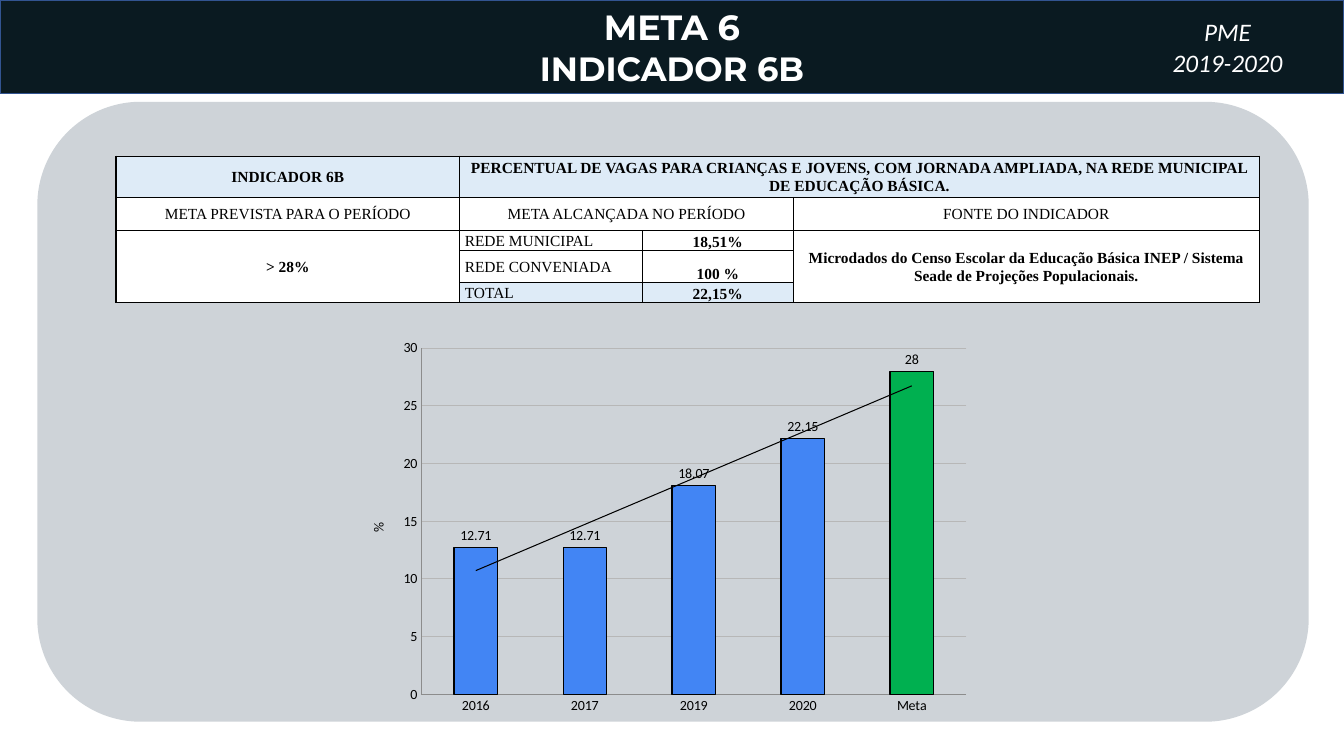
from dataclasses import dataclass

from lxml import etree
from pptx import Presentation
from pptx.chart.data import CategoryChartData
from pptx.dml.color import RGBColor
from pptx.enum.chart import XL_CHART_TYPE, XL_LABEL_POSITION, XL_TICK_MARK
from pptx.enum.shapes import MSO_SHAPE
from pptx.enum.text import MSO_ANCHOR, MSO_AUTO_SIZE, PP_ALIGN
from pptx.oxml import parse_xml
from pptx.oxml.ns import nsdecls, qn
from pptx.util import Inches, Pt

LEFT, CENTER = PP_ALIGN.LEFT, PP_ALIGN.CENTER
MIDDLE, BOTTOM = MSO_ANCHOR.MIDDLE, MSO_ANCHOR.BOTTOM
NO_TICK = MSO_TICK = XL_TICK_MARK.NONE
TITLE_ONLY = 5


@dataclass(frozen=True)
class Theme:
    white: str = "FFFFFF"
    black: str = "000000"
    header: str = "0A1A21"
    header_line: str = "325491"
    panel: str = "CED3D8"
    tint: str = "DEEBF7"
    bar: str = "4285F4"
    goal: str = "00B050"
    grid: str = "B7B7B7"
    axis: str = "8C8C8C"
    heading: str = "Montserrat"
    body: str = "Calibri"
    serif: str = "Times New Roman"
    title_size: float = 25
    subtitle_size: float = 24
    period_size: float = 18
    table_size: float = 11
    chart_size: float = 10


THEME = Theme()


def rgb(code):
    return RGBColor.from_string(code)


def set_font(font, name, size, color, **styles):
    formats = {"name": name, "size": Pt(size), "bold": False, **styles}
    for attribute, value in formats.items():
        setattr(font, attribute, value)
    font.color.rgb = rgb(color)


def paint(item, fill, line, width=1):
    item.fill.solid()
    item.fill.fore_color.rgb = rgb(fill)
    item.line.color.rgb = rgb(line)
    item.line.width = Pt(width)


def place(shape, box):
    for side, length in zip(("left", "top", "width", "height"), box):
        setattr(shape, side, Inches(length))


def write_lines(frame, lines, name, sizes, **styles):
    frame.word_wrap = True
    frame.vertical_anchor = MIDDLE
    for index, (text, size) in enumerate(zip(lines, sizes)):
        line = frame.paragraphs[0] if index == 0 else frame.add_paragraph()
        line.alignment = CENTER
        line.line_spacing = 1.0
        line.space_before = Pt(0)
        run = line.add_run()
        run.text = text
        set_font(run.font, name, size, THEME.white, **styles)


def add_header(slide, box):
    # Title band
    heading = slide.shapes.title
    place(heading, box)
    paint(heading, THEME.header, THEME.header_line)
    heading.text_frame.auto_size = MSO_AUTO_SIZE.NONE
    write_lines(heading.text_frame, ("META 6", "INDICADOR 6B"), THEME.heading,
                (THEME.title_size, THEME.subtitle_size), bold=True)

    # Plan and period at the right of the band
    left, top, width, _ = box
    period_box = (left + width - 2.46, top + 0.11, 2.61, 0.71)
    period = slide.shapes.add_textbox(*map(Inches, period_box))
    write_lines(period.text_frame, ("PME", "2019-2020"), THEME.body,
                (THEME.period_size,) * 2, italic=True)


def add_panel(slide, box):
    panel = slide.shapes.add_shape(MSO_SHAPE.ROUNDED_RECTANGLE, *map(Inches, box))
    panel.shadow.inherit = False
    panel.fill.solid()
    panel.fill.fore_color.rgb = rgb(THEME.panel)
    panel.line.fill.background()


def style_cell(cell, fill):
    margins = {"margin_left": 0.05, "margin_right": 0.05, "margin_top": 0, "margin_bottom": 0}
    for side, length in margins.items():
        setattr(cell, side, Inches(length))
    cell.fill.solid()
    cell.fill.fore_color.rgb = rgb(fill)
    properties = cell._tc.get_or_add_tcPr()
    for index, edge in enumerate(("lnL", "lnR", "lnT", "lnB")):
        properties.insert(index, parse_xml(
            f'<a:{edge} {nsdecls("a")} w="12700"><a:solidFill>'
            f'<a:srgbClr val="{THEME.black}"/></a:solidFill></a:{edge}>'))


def add_indicator_table(slide, box):
    widths = (3.41, 1.81, 1.5, 4.62)
    heights = (0.41, 0.33, 0.16, 0.32, 0.16)
    table = slide.shapes.add_table(len(heights), len(widths), *map(Inches, box)).table
    table.first_row = table.horz_banding = False
    for column, width in zip(table.columns, widths):
        column.width = Inches(width)
    for row, height in zip(table.rows, heights):
        row.height = Inches(height)

    # Fills and borders
    tinted = {(0, 0), (0, 1), (0, 2), (0, 3), (4, 1), (4, 2)}
    for row in range(len(heights)):
        for column in range(len(widths)):
            fill = THEME.tint if (row, column) in tinted else THEME.white
            style_cell(table.cell(row, column), fill)

    # Merged cells, first to last
    for first, last in (((0, 1), (0, 3)), ((1, 1), (1, 2)),
                        ((2, 0), (4, 0)), ((2, 3), (4, 3))):
        table.cell(*first).merge(table.cell(*last))

    # Entries: row, column, text, bold, alignment, anchor
    entries = [
        (0, 0, "INDICADOR 6B", True, CENTER, MIDDLE),
        (0, 1, "PERCENTUAL DE VAGAS PARA CRIANÇAS E JOVENS, COM JORNADA AMPLIADA, "
               "NA REDE MUNICIPAL DE EDUCAÇÃO BÁSICA.", True, CENTER, MIDDLE),
        (1, 0, "META PREVISTA PARA O PERÍODO", False, CENTER, MIDDLE),
        (1, 1, "META ALCANÇADA NO PERÍODO", False, CENTER, MIDDLE),
        (1, 3, "FONTE DO INDICADOR", False, CENTER, MIDDLE),
        (2, 0, "> 28%", True, CENTER, MIDDLE),
        (2, 3, "Microdados do Censo Escolar da Educação Básica INEP / Sistema "
               "Seade de Projeções Populacionais.", True, CENTER, MIDDLE),
    ]
    results = (("REDE MUNICIPAL", "18,51%"), ("REDE CONVENIADA", "100 %"), ("TOTAL", "22,15%"))
    for row, (network, share) in enumerate(results, start=2):
        entries += [(row, 1, network, False, LEFT, MIDDLE),
                    (row, 2, share, True, CENTER, BOTTOM)]
    for row, column, text, bold, alignment, anchor in entries:
        cell = table.cell(row, column)
        cell.vertical_anchor = anchor
        line = cell.text_frame.paragraphs[0]
        line.alignment = alignment
        line.line_spacing = 1.07
        run = line.add_run()
        run.text = text
        set_font(run.font, THEME.serif, THEME.table_size, THEME.black, bold=bold)


def add_progress_chart(slide, box):
    data = CategoryChartData()
    data.categories = ("2016", "2017", "2019", "2020", "Meta")
    data.add_series("Series 1", (12.71, 12.71, 18.07, 22.15, 28))
    chart = slide.shapes.add_chart(
        XL_CHART_TYPE.COLUMN_CLUSTERED, *map(Inches, box), data).chart
    chart.has_legend = chart.has_title = False
    set_font(chart.font, THEME.body, THEME.chart_size, THEME.black)

    # Axes
    percent, years = chart.value_axis, chart.category_axis
    for axis in (percent, years):
        axis.major_tick_mark = axis.minor_tick_mark = NO_TICK
        axis.format.line.color.rgb = rgb(THEME.axis)
    percent.minimum_scale, percent.maximum_scale, percent.major_unit = 0, 30, 5
    percent.major_gridlines.format.line.color.rgb = rgb(THEME.grid)
    percent.major_gridlines.format.line.width = Pt(0.75)
    unit = percent.axis_title.text_frame.paragraphs[0].add_run()
    unit.text = "%"
    set_font(unit.font, THEME.body, THEME.chart_size, THEME.black)

    # Bars, with the goal in green
    plot = chart.plots[0]
    plot.gap_width = 150
    plot.vary_by_categories = False
    bars = plot.series[0]
    paint(bars.format, THEME.bar, THEME.black, 0.75)
    paint(bars.points[4].format, THEME.goal, THEME.black, 0.75)
    labels = bars.data_labels
    labels.show_value = True
    labels.position = XL_LABEL_POSITION.OUTSIDE_END
    set_font(labels.font, THEME.body, THEME.chart_size, THEME.black)

    # Linear trend
    bars._element.find(qn("c:cat")).addprevious(parse_xml(
        f'<c:trendline {nsdecls("c", "a")}><c:spPr><a:ln w="9525"><a:solidFill>'
        f'<a:srgbClr val="{THEME.black}"/></a:solidFill></a:ln></c:spPr>'
        '<c:trendlineType val="linear"/><c:dispRSqr val="0"/><c:dispEq val="0"/>'
        '</c:trendline>'))

    # Plot area as shares of the chart
    area = chart._chartSpace.find(".//" + qn("c:plotArea"))
    layout = area.find(qn("c:layout"))
    if layout is None:
        layout = etree.Element(qn("c:layout"))
        area.insert(0, layout)
    manual = etree.SubElement(layout, qn("c:manualLayout"))
    shares = {"layoutTarget": "inner", "xMode": "edge", "yMode": "edge",
              "x": "0.115", "y": "0.04", "w": "0.865", "h": "0.89"}
    for tag, value in shares.items():
        etree.SubElement(manual, qn(f"c:{tag}"), val=value)


def main():
    deck = Presentation()
    deck.slide_width, deck.slide_height = Inches(13.33), Inches(7.5)
    slide = deck.slides.add_slide(deck.slide_layouts[TITLE_ONLY])
    add_header(slide, (0, 0, 13.33, 0.93))
    add_panel(slide, (0.37, 1.01, 12.61, 6.15))
    add_indicator_table(slide, (1.15, 1.55, 11.35, 1.46))
    add_progress_chart(slide, (3.46, 3.3, 6.25, 3.86))
    deck.save("out.pptx")


if __name__ == "__main__":
    main()
